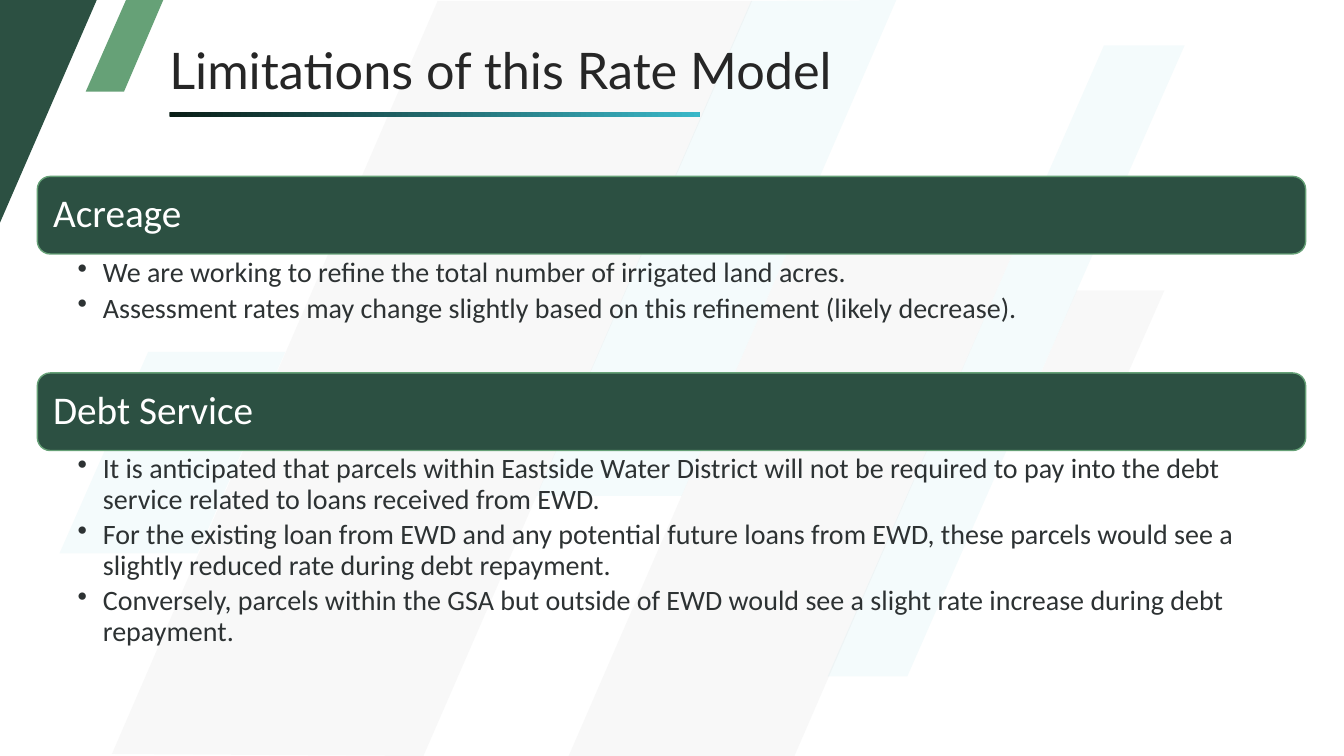
from dataclasses import dataclass

from lxml import etree
from pptx import Presentation
from pptx.dml.color import RGBColor
from pptx.enum.shapes import MSO_SHAPE
from pptx.enum.text import MSO_ANCHOR, PP_ALIGN
from pptx.oxml.ns import qn
from pptx.util import Emu, Pt

ROUNDED = MSO_SHAPE.ROUNDED_RECTANGLE
TOP, MIDDLE, BOTTOM = MSO_ANCHOR.TOP, MSO_ANCHOR.MIDDLE, MSO_ANCHOR.BOTTOM
LEFT = PP_ALIGN.LEFT
EMU_PER_PX = 9144


@dataclass(frozen=True)
class Theme:
    dark_green: str = "2C5042"
    light_green: str = "66A177"
    gray: str = "808080"
    teal: str = "3AB7C8"
    near_black: str = "0A1E16"
    title_color: str = "262626"
    body_color: str = "2D3233"
    white: str = "FFFFFF"
    title_font: str = "Lato"
    body_font: str = "Calibri"
    title_size: int = 36
    heading_size: int = 28
    body_size: int = 20


THEME = Theme()

BACKGROUND_BANDS = [
    (THEME.gray, [(434, 1), (746, 1), (420, 750), (111, 748)]),
    (THEME.teal, [(745, 1), (889, 0), (676, 492), (532, 492)]),
    (THEME.gray, [(794, 220), (1018, 220), (788, 750), (564, 750)]),
    (THEME.teal, [(147, 349), (283, 349), (196, 549), (59, 549)]),
    (THEME.teal, [(1095, 45), (1175, 45), (900, 671), (821, 671)]),
    (THEME.gray, [(1068, 288), (1155, 288), (1099, 415), (1013, 415)]),
]
CORNER_BANDS = [
    (THEME.light_green, [(125, 0), (162, 0), (123, 91), (85, 91)]),
    (THEME.dark_green, [(0, 0), (96, 0), (0, 221)]),
]
SECTION_LEFT, SECTION_WIDTH, HEADING_HEIGHT = 37, 1258, 77
SECTIONS = [
    (175, 118, "Acreage", [
        "We are working to refine the total number of irrigated land acres.",
        "Assessment rates may change slightly based on this refinement (likely decrease).",
    ]),
    (370, 202, "Debt Service", [
        "It is anticipated that parcels within Eastside Water District will not be required "
        "to pay into the debt service related to loans received from EWD.",
        "For the existing loan from EWD and any potential future loans from EWD, these parcels "
        "would see a slightly reduced rate during debt repayment.",
        "Conversely, parcels within the GSA but outside of EWD would see a slight rate increase "
        "during debt repayment.",
    ]),
]


def px(value):
    return Emu(value * EMU_PER_PX)


def rgb(color):
    return RGBColor.from_string(color)


def add_band(slide, color, points, opacity=100):
    builder = slide.shapes.build_freeform(*points[0], scale=EMU_PER_PX)
    builder.add_line_segments(points[1:], close=True)
    shape = builder.convert_to_shape()
    shape.shadow.inherit = False
    shape.line.fill.background()
    shape.fill.solid()
    shape.fill.fore_color.rgb = rgb(color)
    if opacity < 100:
        color_element = shape.fill._xPr.find(qn("a:solidFill"))[0]
        etree.SubElement(color_element, qn("a:alpha"), val=str(opacity * 1000))


def add_rounded(slide, left, top, width, height):
    shape = slide.shapes.add_shape(ROUNDED, px(left), px(top), px(width), px(height))
    shape.shadow.inherit = False
    return shape


def set_frame(shape, anchor, left, top, right, bottom):
    frame = shape.text_frame
    frame.word_wrap = True
    frame.vertical_anchor = anchor
    frame.margin_left, frame.margin_top = px(left), px(top)
    frame.margin_right, frame.margin_bottom = px(right), px(bottom)
    return frame


def set_paragraph(paragraph, text, font_name, size, color, line_spacing):
    paragraph.text = text
    paragraph.alignment = LEFT
    paragraph.line_spacing = line_spacing
    paragraph.font.name = font_name
    paragraph.font.size = Pt(size)
    paragraph.font.color.rgb = rgb(color)


def add_bullet(paragraph):
    properties = paragraph._p.get_or_add_pPr()
    properties.set("marL", str(px(25)))
    properties.set("indent", str(px(-25)))
    etree.SubElement(properties, qn("a:buChar"), char="•")


def add_title(slide, text):
    box = slide.shapes.add_textbox(px(162), px(32), px(1165), px(73))
    frame = set_frame(box, BOTTOM, 6, 6, 6, 6)
    set_paragraph(frame.paragraphs[0], text, THEME.title_font, THEME.title_size,
                  THEME.title_color, 1.2)


def add_title_rule(slide):
    rule = add_rounded(slide, 168, 111, 526, 5)
    rule.adjustments[0] = 0.24
    rule.line.fill.background()
    rule.fill.gradient()
    rule.fill.gradient_angle = 0
    for stop, position, color in zip(rule.fill.gradient_stops, (0, 1),
                                     (THEME.near_black, THEME.teal)):
        stop.position = position
        stop.color.rgb = rgb(color)


def add_heading(slide, top, text):
    bar = add_rounded(slide, SECTION_LEFT, top, SECTION_WIDTH, HEADING_HEIGHT)
    bar.fill.solid()
    bar.fill.fore_color.rgb = rgb(THEME.dark_green)
    bar.line.color.rgb = rgb(THEME.light_green)
    bar.line.width = Pt(1)
    frame = set_frame(bar, MIDDLE, 12, 12, 12, 12)
    set_paragraph(frame.paragraphs[0], text, THEME.body_font, THEME.heading_size,
                  THEME.white, 0.9)


def add_bullets(slide, top, height, items):
    box = slide.shapes.add_textbox(px(SECTION_LEFT), px(top), px(SECTION_WIDTH), px(height))
    frame = set_frame(box, TOP, 40, 3, 16, 3)
    for index, item in enumerate(items):
        paragraph = frame.add_paragraph() if index else frame.paragraphs[0]
        add_bullet(paragraph)
        set_paragraph(paragraph, item, THEME.body_font, THEME.body_size,
                      THEME.body_color, 0.9)
        paragraph.space_after = Pt(4)


def main():
    presentation = Presentation()
    presentation.slide_width, presentation.slide_height = px(1333), px(750)
    slide = presentation.slides.add_slide(presentation.slide_layouts[6])
    for color, points in BACKGROUND_BANDS:
        add_band(slide, color, points, opacity=5)
    for color, points in CORNER_BANDS:
        add_band(slide, color, points)
    add_title(slide, "Limitations of this Rate Model")
    add_title_rule(slide)
    for top, body_height, heading, items in SECTIONS:
        add_heading(slide, top, heading)
        add_bullets(slide, top + HEADING_HEIGHT + 1, body_height, items)
    presentation.save("out.pptx")


if __name__ == "__main__":
    main()
